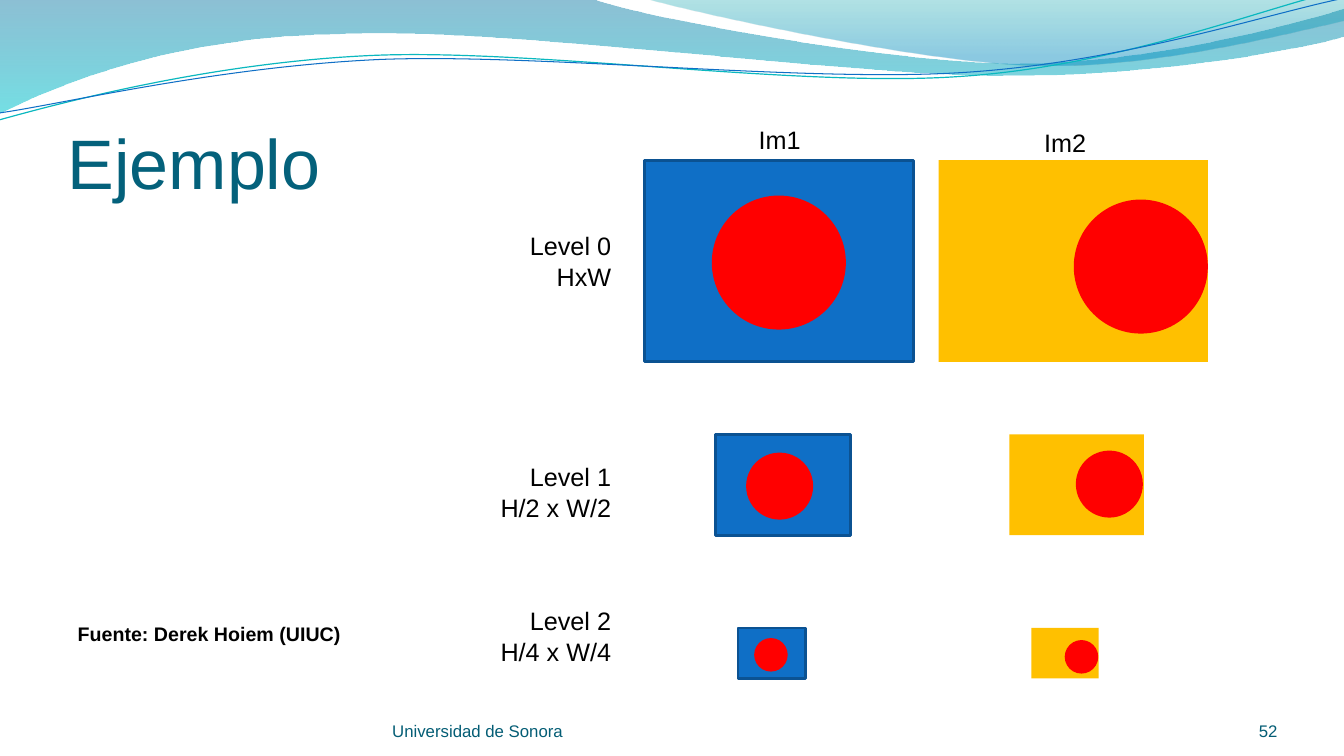
from lxml import etree
from pptx import Presentation
from pptx.dml.color import RGBColor
from pptx.enum.shapes import MSO_SHAPE
from pptx.enum.text import MSO_ANCHOR, MSO_AUTO_SIZE, PP_ALIGN
from pptx.oxml.ns import qn
from pptx.util import Inches, Pt

RECT, OVAL = MSO_SHAPE.RECTANGLE, MSO_SHAPE.OVAL
LEFT, RIGHT = PP_ALIGN.LEFT, PP_ALIGN.RIGHT
TOP, BOTTOM = MSO_ANCHOR.TOP, MSO_ANCHOR.BOTTOM
FIXED, GROW = MSO_AUTO_SIZE.NONE, MSO_AUTO_SIZE.SHAPE_TO_FIT_TEXT
HEX = {"title": "04617B", "foot": "045D75", "ink": "000000", "blue": "0F6FC6",
       "edge": "0B5292", "gold": "FFC000", "red": "FF0000", "teal": "0AB8BF",
       "deep": "0074A1", "aqua": "00C6CF", "sea": "00A1A9", "sky": "008BBF"}
RGB = {name: RGBColor.from_string(code) for name, code in HEX.items()}

deck = Presentation()
deck.slide_width, deck.slide_height = Inches(13.33), Inches(7.5)
slide = deck.slides.add_slide(deck.slide_layouts[1])
shapes = slide.shapes
UNIT = deck.slide_width / 13.33  # one grid column or row


def cells(*counts):
    return [round(n * UNIT) for n in counts]


def write(shape, text, size, tone, align=LEFT, bold=False, **form):
    frame = shape.text_frame
    frame.text = text
    for key, value in form.items():
        setattr(frame, key, value)
    look = {"name": "Arial", "size": Pt(size), "bold": bold}
    for para in frame.paragraphs:
        para.alignment = align
        for run in para.runs:
            for key, value in look.items():
                setattr(run.font, key, value)
            run.font.color.rgb = RGB[tone]


# Header waves: pairs are corners, sixes are Bezier curves
waves = [
    ([(0, 0), (5.87, -0.01), (6.34, 0.17, 8.85, 0.63, 10.11, 0.63),
      (11.38, 0.63, 12.78, 0.26, 13.33, 0.09), (13.35, 0.36),
      (13.11, 0.44, 11.6, 0.76, 9.94, 0.75), (8.29, 0.75, 5.09, 0.28, 3.43, 0.34),
      (1.72, 0.36, 0.61, 0.83, -0.01, 1.13), (0, 0)],
     [(0, "deep", 45), (1, "aqua", 55)], None),
    ([(6.39, -0.01), (6.79, 0.11, 9.09, 0.62, 10.25, 0.65),
      (11.41, 0.69, 12.82, 0.32, 13.33, 0.21), (13.33, 0), (6.39, -0.01)],
     [(0, "sea", 30), (0.8, "sky", 45)], None),
    ([(-0.01, 1.19), (0.64, 1.01, 2.11, 0.62, 3.69, 0.55),
      (5.27, 0.48, 7.9, 0.87, 9.5, 0.76), (11.1, 0.66, 12.52, 0.08, 13.31, -0.1)],
     None, ("teal", 0.85)),
    ([(0, 1.12), (0.63, 1.03, 2.18, 0.66, 3.78, 0.59),
      (5.37, 0.53, 7.96, 0.82, 9.55, 0.72), (11.15, 0.62, 12.55, 0.14, 13.34, -0.02)],
     None, ("blue", 0.75)),
]
for parts, stops, line in waves:
    dots = [cells(*part[i:i + 2]) for part in parts for i in range(0, len(part), 2)]
    pen = shapes.build_freeform(*dots[0], scale=1.0)
    pen.add_line_segments(dots[1:], close=bool(stops))
    wave = pen.convert_to_shape()
    wave.shadow.inherit = False
    # Turn each run of three segments into one curve
    legs = iter(list(wave.element.iter(qn("a:lnTo"))))
    for part in parts[1:]:
        leg = next(legs)
        if len(part) == 6:
            curve = etree.Element(qn("a:cubicBezTo"))
            leg.addprevious(curve)
            for old in (leg, next(legs), next(legs)):
                curve.append(old[0])
                old.getparent().remove(old)
    if stops:
        wave.line.fill.background()
        wave.fill.gradient()
        wave.fill.gradient_angle = 270
        for stop, (place, tone, _) in zip(wave.fill.gradient_stops, stops):
            stop.position = place
            stop.color.rgb = RGB[tone]
        colors = wave.element.spPr.iter(qn("a:srgbClr"))
        for color, (_, _, alpha) in zip(colors, stops):
            etree.SubElement(color, qn("a:alpha"), val=str(alpha * 1000))
    else:
        wave.fill.background()
        wave.line.color.rgb = RGB[line[0]]
        wave.line.width = Pt(line[1])

# Title and source
title, body = shapes.title, slide.placeholders[1]
for holder, spot in ((title, (0.67, 0.77, 12, 1.25)), (body, (0.67, 2.12, 12, 4.8))):
    holder.left, holder.top, holder.width, holder.height = cells(*spot)
write(title, "Ejemplo", 50, "title", vertical_anchor=BOTTOM, auto_size=FIXED,
      margin_left=0, margin_right=0, margin_bottom=0)
write(body, "Fuente: Derek Hoiem (UIUC)", 14, "ink", bold=True,
      vertical_anchor=BOTTOM, auto_size=FIXED, margin_bottom=Inches(0.52))
props = body.text_frame.paragraphs[0]._p.get_or_add_pPr()
props.set("marL", "0")
props.set("indent", "0")
etree.SubElement(props, qn("a:buNone"))

# Footer
for text, left, width, align in (("Universidad de Sonora", 3.89, 4.89, LEFT),
                                 ("52", 11.56, 1.11, RIGHT)):
    write(shapes.add_textbox(*cells(left, 6.95, width, 0.4)), text, 12, "foot", align,
          vertical_anchor=BOTTOM, word_wrap=True, margin_left=0, margin_right=0,
          margin_top=0, margin_bottom=0)

# Level and image labels
labels = [("Level 0\nHxW", 5.14, 2.24, 1.02, 0.71),
          ("Level 1\nH/2 x W/2", 4.85, 4.53, 1.31, 0.71),
          ("Level 2\nH/4 x W/4", 4.85, 5.96, 1.31, 0.71),
          ("Im1", 7.42, 1.18, 0.62, 0.4), ("Im2", 10.25, 1.21, 0.62, 0.4)]
for text, *spot in labels:
    write(shapes.add_textbox(*cells(*spot)), text, 18, "ink", RIGHT,
          vertical_anchor=TOP, word_wrap=False, auto_size=GROW)

# Pyramid: each level halves the images and their discs
WIDE, TALL, DISC = 2.67, 2, 1.33
layers = [
    (RECT, "gold", WIDE, TALL, [(9.31, 1.59), (10.01, 4.31), (10.23, 6.23)]),
    (RECT, "blue", WIDE, TALL, [(6.39, 1.59), (7.1, 4.31), (7.32, 6.23)]),
    (OVAL, "red", DISC, DISC, [(7.06, 1.94), (7.4, 4.49), (7.48, 6.33)]),
    (OVAL, "red", DISC, DISC, [(10.65, 1.98), (10.67, 4.47), (10.56, 6.35)]),
]
for kind, tone, wide, tall, spots in layers:
    for level, spot in enumerate(spots):
        part = 2 ** level
        item = shapes.add_shape(kind, *cells(*spot, wide / part, tall / part))
        item.shadow.inherit = False
        item.fill.solid()
        item.fill.fore_color.rgb = RGB[tone]
        if tone == "blue":
            item.line.color.rgb = RGB["edge"]
            item.line.width = Pt(2)
        else:
            item.line.fill.background()

deck.save("out.pptx")
